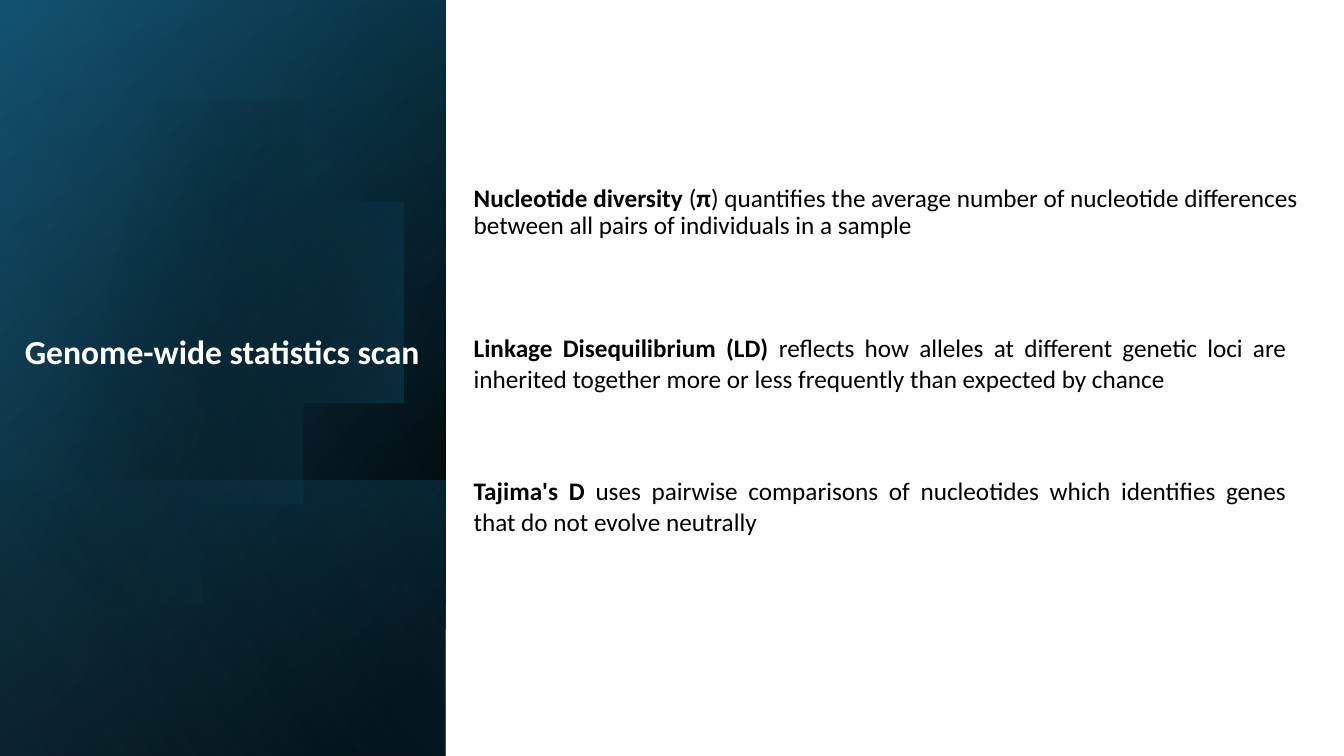
import math

import pptx
import pptx.dml.color
import pptx.enum.shapes
import pptx.enum.text
import pptx.oxml
import pptx.oxml.ns
import pptx.util

Inches = pptx.util.Inches
ALIGN = pptx.enum.text.PP_ALIGN
ANCHOR = pptx.enum.text.MSO_ANCHOR
W, H = 13.33, 7.5
PANEL_W = 4.42

# Each stop is position %, colour, opacity %.
PANEL_LAYERS = [
    (0, [(8, "000000", 100), (100, "104862", 100)], 50),
    (0, [(0, "000000", 0), (99, "156082", 46)], 30),
    (0.635, [(2, "156082", 29), (100, "000000", 30)], 130),
]
DISC_STOPS = [(29, "000000", 0), (100, "156082", 43)]
SHEEN = (0, [(0, "000000", 0), (99, "46B1E1", 11)], 120)

# Each definition is top, width, format, runs of text and boldness.
DEFINITIONS = [
    (1.79, 8.73, {"line_spacing": 0.9}, [
        ("Nucleotide diversity ", True), ("(", False), ("π", True),
        (") quantifies the average number of nucleotide differences "
         "between all pairs of individuals in a sample", False)]),
    (3.25, 8.26, {"alignment": ALIGN.JUSTIFY}, [
        ("Linkage Disequilibrium (LD) ", True),
        ("reflects how alleles at different genetic loci are inherited "
         "together more or less frequently than expected by chance", False)]),
    (4.67, 8.26, {"alignment": ALIGN.JUSTIFY}, [
        ("Tajima's D ", True),
        ("uses pairwise comparisons of nucleotides which identifies genes "
         "that do not evolve neutrally", False)]),
]


def rgb(color):
    return pptx.dml.color.RGBColor.from_string(color)


def set_all(target, values):
    for name, value in values.items():
        setattr(target, name, value)


def paint_gradient(sp, stops, angle):
    """Give a shape a linear gradient with opacity, and no line or shadow."""
    sp.shadow.inherit = False
    sp.line.fill.background()
    sp.fill.background()
    gs = "".join(
        f'<a:gs pos="{pos * 1000}"><a:srgbClr val="{color}">'
        f'<a:alpha val="{alpha * 1000}"/></a:srgbClr></a:gs>'
        for pos, color, alpha in stops)
    grad = pptx.oxml.parse_xml(
        f'<a:gradFill {pptx.oxml.ns.nsdecls("a")} rotWithShape="1">'
        f'<a:gsLst>{gs}</a:gsLst>'
        f'<a:lin ang="{angle * 60000}" scaled="0"/></a:gradFill>')
    spPr = sp._element.spPr
    spPr.replace(spPr.find(pptx.oxml.ns.qn("a:noFill")), grad)


def add_layer(s, box, start, stops, angle):
    """Cover the box from a share of its height down with a turned rectangle."""
    x, y, w, h = box
    length = h * (1 - start)
    cx, cy = x + w / 2, y + h - length / 2
    sp = s.shapes.add_shape(
        pptx.enum.shapes.MSO_SHAPE.RECTANGLE, Inches(cx - length / 2),
        Inches(cy - w / 2), Inches(length), Inches(w))
    sp.rotation = 90
    sp._element.spPr.xfrm.set("flipH", "1")
    paint_gradient(sp, stops, angle)


def add_disc(s, box):
    """Draw a disc cut off by the left edge of the box."""
    x, y, w, h = box
    cx, cy, radius = 0.32 * w, 0.45 * h, 0.304 * h
    limit = math.acos(-cx / radius)
    steps = 90
    turns = [limit * (2 * i / steps - 1) for i in range(steps + 1)]
    points = [(x + cx + radius * math.cos(t), y + cy + radius * math.sin(t))
              for t in turns]
    builder = s.shapes.build_freeform(*points[0], scale=Inches(1))
    builder.add_line_segments(points[1:], close=True)
    paint_gradient(builder.convert_to_shape(), DISC_STOPS, 14)


def add_text(s, box, runs, size, color, para, anchor=ANCHOR.TOP):
    tf = s.shapes.add_textbox(*map(Inches, box)).text_frame
    set_all(tf, {"word_wrap": True, "vertical_anchor": anchor})
    p = tf.paragraphs[0]
    set_all(p, para)
    for text, bold in runs:
        r = p.add_run()
        r.text = text
        set_all(r.font, {"name": "Calibri", "size": pptx.util.Pt(size),
                         "bold": bold})
        r.font.color.rgb = rgb(color)


def add_title_panel(s, box):
    x, y, w, h = box
    for layer in PANEL_LAYERS:
        add_layer(s, box, *layer)
    add_disc(s, box)
    add_layer(s, box, *SHEEN)
    add_text(s, (x + 0.12, y + 3.08, w - 0.28, 0.66),
             [("Genome-wide statistics scan", True)], 24, "FFFFFF",
             {"alignment": ALIGN.RIGHT, "line_spacing": 0.9}, ANCHOR.BOTTOM)


def add_definitions(s, box):
    x, y, _, _ = box
    for top, width, para, runs in DEFINITIONS:
        add_text(s, (x + 0.18, y + top, width, 0.72), runs, 18, "000000", para)


def main():
    prs = pptx.Presentation()
    set_all(prs, {"slide_width": Inches(W), "slide_height": Inches(H)})
    s = prs.slides.add_slide(prs.slide_layouts[6])
    s.background.fill.solid()
    s.background.fill.fore_color.rgb = rgb("FFFFFF")
    add_title_panel(s, (0, 0, PANEL_W, H))
    add_definitions(s, (PANEL_W, 0, W - PANEL_W, H))
    prs.save("out.pptx")


if __name__ == "__main__":
    main()
